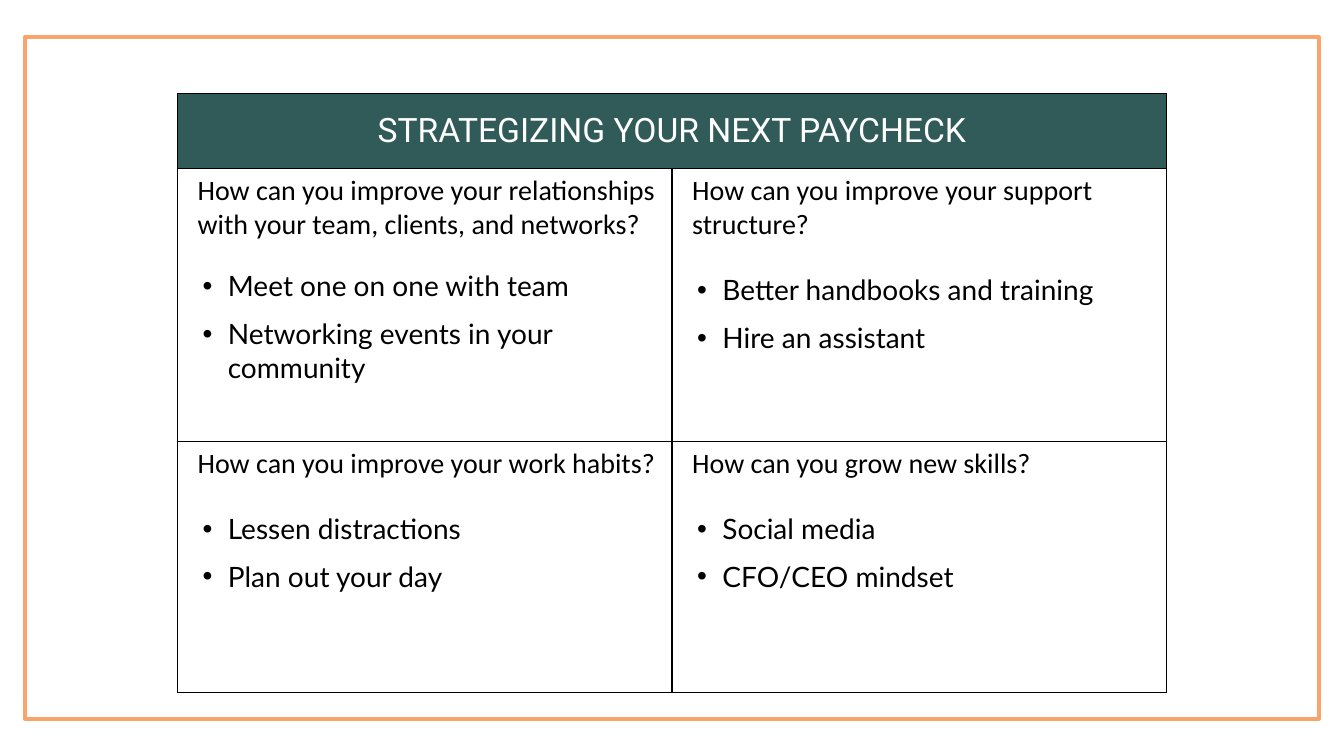
from dataclasses import dataclass

from lxml.etree import SubElement
from pptx import Presentation
from pptx.dml.color import RGBColor
from pptx.enum.shapes import MSO_SHAPE
from pptx.enum.text import MSO_ANCHOR, PP_ALIGN
from pptx.oxml.ns import qn
from pptx.slide import Slide
from pptx.table import Table, _Cell
from pptx.text.text import _Paragraph
from pptx.util import Inches, Pt

ORANGE = "F9A46C"
GREEN = "305B58"
WHITE = "FFFFFF"
BLACK = "000000"
TABLE_WIDTH = 9.81
ROW_HEIGHTS = (0.74, 2.71, 2.49)


@dataclass(frozen=True)
class Quadrant:
    row: int
    column: int
    question: str
    answers: tuple[str, ...]
    gap: float = 22


QUADRANTS = (
    Quadrant(1, 0, "How can you improve your relationships with your team, clients, and networks?",
             ("Meet one on one with team", "Networking events in your community"), 19.5),
    Quadrant(1, 1, "How can you improve your support structure?",
             ("Better handbooks and training", "Hire an assistant")),
    Quadrant(2, 0, "How can you improve your work habits?",
             ("Lessen distractions", "Plan out your day")),
    Quadrant(2, 1, "How can you grow new skills?",
             ("Social media", "CFO/CEO mindset")),
)


def color(value: str) -> RGBColor:
    return RGBColor.from_string(value)


def add_span(para: _Paragraph, text: str, font: str, size: float, shade: str) -> None:
    span = para.add_run()
    span.text = text
    span.font.name = font
    span.font.size = Pt(size)
    span.font.color.rgb = color(shade)


def indent(para: _Paragraph, left: float, first: float, bullet: str = "") -> None:
    properties = para._p.get_or_add_pPr()
    properties.set("marL", str(Inches(left)))
    properties.set("indent", str(Inches(first)))
    if bullet:
        SubElement(properties, qn("a:buFont"), typeface="Arial")
        SubElement(properties, qn("a:buChar"), char=bullet)


def style_cell(cell: _Cell, fill: str) -> None:
    properties = cell._tc.get_or_add_tcPr()
    for side in ("L", "R", "T", "B"):
        border = SubElement(properties, qn(f"a:ln{side}"), w=str(Pt(1)))
        paint = SubElement(border, qn("a:solidFill"))
        SubElement(paint, qn("a:srgbClr"), val=BLACK)
    cell.fill.solid()
    cell.fill.fore_color.rgb = color(fill)


def add_frame(page: Slide) -> None:
    frame = page.shapes.add_shape(
        MSO_SHAPE.RECTANGLE, Inches(0.25), Inches(0.37), Inches(12.83), Inches(6.76))
    frame.shadow.inherit = False
    frame.fill.background()
    frame.line.color.rgb = color(ORANGE)
    frame.line.width = Pt(3)


def add_grid(page: Slide) -> Table:
    grid = page.shapes.add_table(
        len(ROW_HEIGHTS), 2, Inches(1.76), Inches(0.93),
        Inches(TABLE_WIDTH), Inches(sum(ROW_HEIGHTS))).table
    grid.horz_banding = False
    grid.first_row = False
    for column in grid.columns:
        column.width = Inches(TABLE_WIDTH / 2)
    for index, height in enumerate(ROW_HEIGHTS):
        grid.rows[index].height = Inches(height)
        for cell in grid.rows[index].cells:
            style_cell(cell, WHITE if index else GREEN)
    return grid


def fill_heading(grid: Table, text: str) -> None:
    heading = grid.cell(0, 0)
    heading.merge(grid.cell(0, 1))
    heading.vertical_anchor = MSO_ANCHOR.MIDDLE
    para = heading.text_frame.paragraphs[0]
    para.alignment = PP_ALIGN.CENTER
    add_span(para, text, "Roboto", 24, WHITE)


def fill_quadrant(grid: Table, quadrant: Quadrant) -> None:
    frame = grid.cell(quadrant.row, quadrant.column).text_frame
    question = frame.paragraphs[0]
    indent(question, 0.1, 0)
    question.space_after = Pt(quadrant.gap)
    add_span(question, quadrant.question, "Calibri", 20, BLACK)
    for answer in quadrant.answers:
        para = frame.add_paragraph()
        indent(para, 0.4, -0.25, "•")
        para.space_after = Pt(10)
        add_span(para, answer, "Lato", 20, BLACK)


def main() -> None:
    deck = Presentation()
    deck.slide_width = Inches(13.33)
    deck.slide_height = Inches(7.5)
    page = deck.slides.add_slide(deck.slide_layouts[6])
    add_frame(page)
    grid = add_grid(page)
    fill_heading(grid, "STRATEGIZING YOUR NEXT PAYCHECK")
    for quadrant in QUADRANTS:
        fill_quadrant(grid, quadrant)
    deck.save("out.pptx")


if __name__ == "__main__":
    main()
